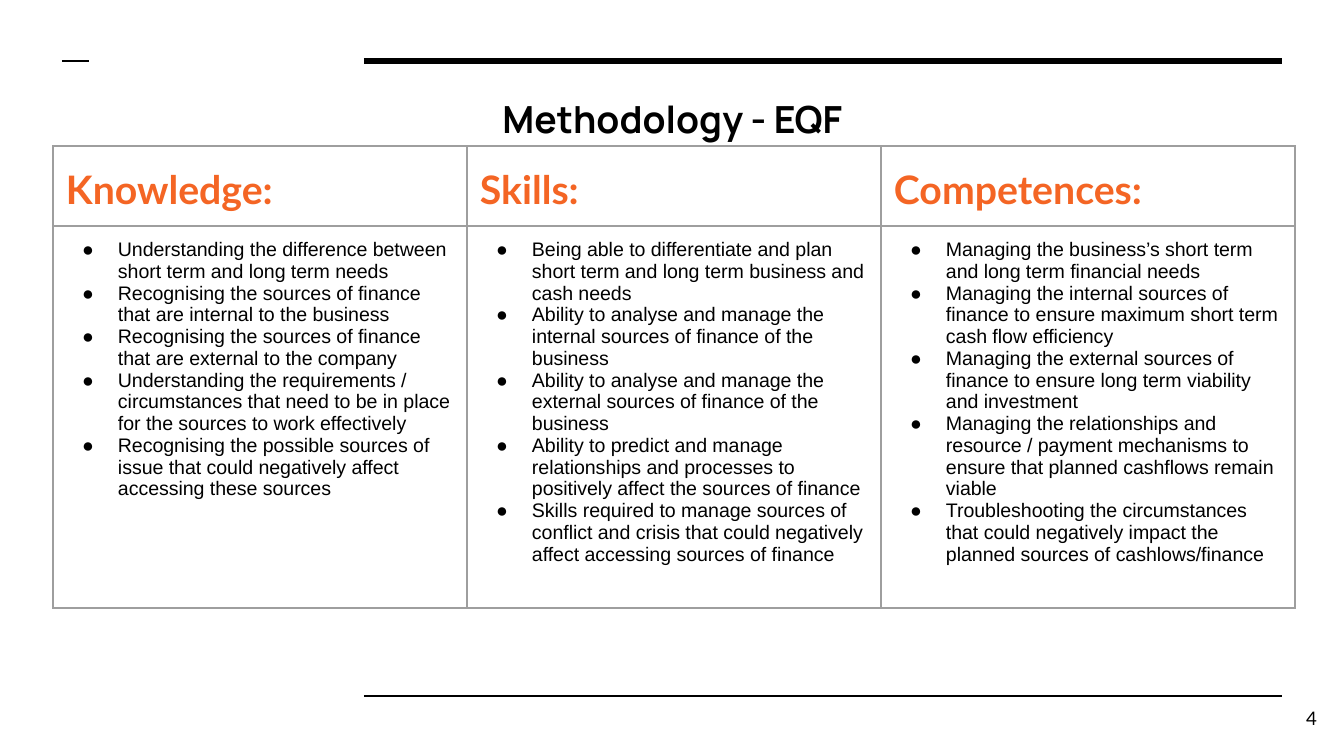
import pptx
import pptx.dml.color
import pptx.enum.shapes
import pptx.enum.text
import pptx.oxml
import pptx.oxml.ns
import pptx.util

WIDTH, HEIGHT = 1344, 756
SCALE = 9144000 / WIDTH
INSET = 13

BLACK = pptx.dml.color.RGBColor(0x00, 0x00, 0x00)
ORANGE = pptx.dml.color.RGBColor(0xF4, 0x65, 0x24)
GREY = pptx.dml.color.RGBColor(0x9E, 0x9E, 0x9E)

TITLE_FONT = {"name": "Manrope", "size": pptx.util.Pt(20), "bold": True}
HEADING_FONT = {"name": "Lato", "size": pptx.util.Pt(21), "bold": True}
BODY_FONT = {"name": "Arial", "size": pptx.util.Pt(10.5), "bold": False}
NUMBER_FONT = {"name": "Lato", "size": pptx.util.Pt(10)}

ALIGN = pptx.enum.text.PP_ALIGN
ANCHOR = pptx.enum.text.MSO_ANCHOR

RULES = [
    # left, right, y, points
    (364, 1282, 61, 3),
    (364, 1282, 696, 1.5),
    (62, 89, 61, 1.5),
]

COLUMNS = {
    "Knowledge:": [
        "Understanding the difference between short term and long term needs",
        "Recognising the sources of finance that are internal to the business",
        "Recognising the sources of finance that are external to the company",
        "Understanding the requirements / circumstances that need to be in place "
        "for the sources to work effectively",
        "Recognising the possible sources of issue that could negatively affect "
        "accessing these sources",
    ],
    "Skills:": [
        "Being able to differentiate and plan short term and long term business and cash needs",
        "Ability to analyse and manage the internal sources of finance of the business",
        "Ability to analyse and manage the external sources of finance of the business",
        "Ability to predict and manage relationships and processes to positively affect "
        "the sources of finance",
        "Skills required to manage sources of conflict and crisis that could negatively "
        "affect accessing sources of finance",
    ],
    "Competences:": [
        "Managing the business’s short term and long term financial needs",
        "Managing the internal sources of finance to ensure maximum short term cash flow efficiency",
        "Managing the external sources of finance to ensure long term viability and investment",
        "Managing the relationships and resource / payment mechanisms to ensure that "
        "planned cashflows remain viable",
        "Troubleshooting the circumstances that could negatively impact the planned "
        "sources of cashlows/finance",
    ],
}


def px(length):
    return pptx.util.Emu(round(length * SCALE))


def apply_format(target, values):
    for name, value in values.items():
        setattr(target, name, value)


def set_insets(target):
    sides = ("left", "right", "top", "bottom")
    apply_format(target, {f"margin_{side}": px(INSET) for side in sides})


def write_span(para, text, font, color=BLACK):
    span = para.add_run()
    span.text = text
    apply_format(span.font, font)
    span.font.color.rgb = color


def add_element(parent, xml):
    """Append one DrawingML element, given without its namespace declaration."""
    tag, rest = xml.split(" ", 1)
    namespace = pptx.oxml.ns.nsdecls("a")
    parent.append(pptx.oxml.parse_xml(f"{tag} {namespace} {rest}"))


def add_rule(page, left, right, y, weight):
    rule = page.shapes.add_connector(
        pptx.enum.shapes.MSO_CONNECTOR.STRAIGHT, px(left), px(y), px(right), px(y))
    rule.line.color.rgb = BLACK
    rule.line.width = pptx.util.Pt(weight)
    add_element(rule.element.spPr, "<a:effectLst />")


def fill_text_box(box, text, font, align, anchor):
    frame = box.text_frame
    set_insets(frame)
    apply_format(frame, {"word_wrap": True, "vertical_anchor": anchor,
                         "auto_size": pptx.enum.text.MSO_AUTO_SIZE.NONE})
    frame.paragraphs[0].alignment = align
    write_span(frame.paragraphs[0], text, font)


def add_title(page, left, top, width, height):
    title = page.shapes.title
    apply_format(title, {"left": px(left), "top": px(top),
                         "width": px(width), "height": px(height)})
    fill_text_box(title, "Methodology - EQF", TITLE_FONT, ALIGN.CENTER, ANCHOR.TOP)


def add_page_number(page, left, top, width, height):
    box = page.shapes.add_textbox(px(left), px(top), px(width), px(height))
    fill_text_box(box, "4", NUMBER_FONT, ALIGN.RIGHT, ANCHOR.MIDDLE)


def format_cell(cell):
    set_insets(cell)
    properties = cell._tc.get_or_add_tcPr()
    for side in "LRTB":
        add_element(properties, f'<a:ln{side} w="9525"><a:solidFill><a:srgbClr val="{GREY}"/>'
                                f"</a:solidFill></a:ln{side}>")
    cell.fill.background()


def add_bullet(para):
    properties = para._p.get_or_add_pPr()
    properties.set("marL", str(px(52)))
    properties.set("indent", str(px(-36)))
    add_element(properties, f'<a:buClr ><a:srgbClr val="{BLACK}"/></a:buClr>')
    add_element(properties, '<a:buFont typeface="Arial"/>')
    add_element(properties, '<a:buChar char="●"/>')


def add_outcome_table(page, left, top, column_width, row_heights):
    table = page.shapes.add_table(
        len(row_heights), len(COLUMNS), px(left), px(top),
        px(column_width * len(COLUMNS)), px(sum(row_heights))).table
    apply_format(table, {"first_row": False, "horz_banding": False})
    for row, height in zip(table.rows, row_heights):
        row.height = px(height)
    for index, (heading, outcomes) in enumerate(COLUMNS.items()):
        table.columns[index].width = px(column_width)
        head, body = table.cell(0, index), table.cell(1, index)
        format_cell(head)
        format_cell(body)
        para = head.text_frame.paragraphs[0]
        para.line_spacing = 1.15
        write_span(para, heading, HEADING_FONT, ORANGE)
        for number, outcome in enumerate(outcomes):
            frame = body.text_frame
            para = frame.add_paragraph() if number else frame.paragraphs[0]
            add_bullet(para)
            write_span(para, outcome, BODY_FONT)


def main():
    deck = pptx.Presentation()
    apply_format(deck, {"slide_width": px(WIDTH), "slide_height": px(HEIGHT)})
    page = deck.slides.add_slide(deck.slide_layouts.get_by_name("Title Only"))
    for rule in RULES:
        add_rule(page, *rule)
    add_title(page, 190, 83, 965, 93)
    add_outcome_table(page, 53, 146, 414, (57, 382))
    add_page_number(page, 1249, 689, 81, 58)
    deck.save("out.pptx")


if __name__ == "__main__":
    main()
